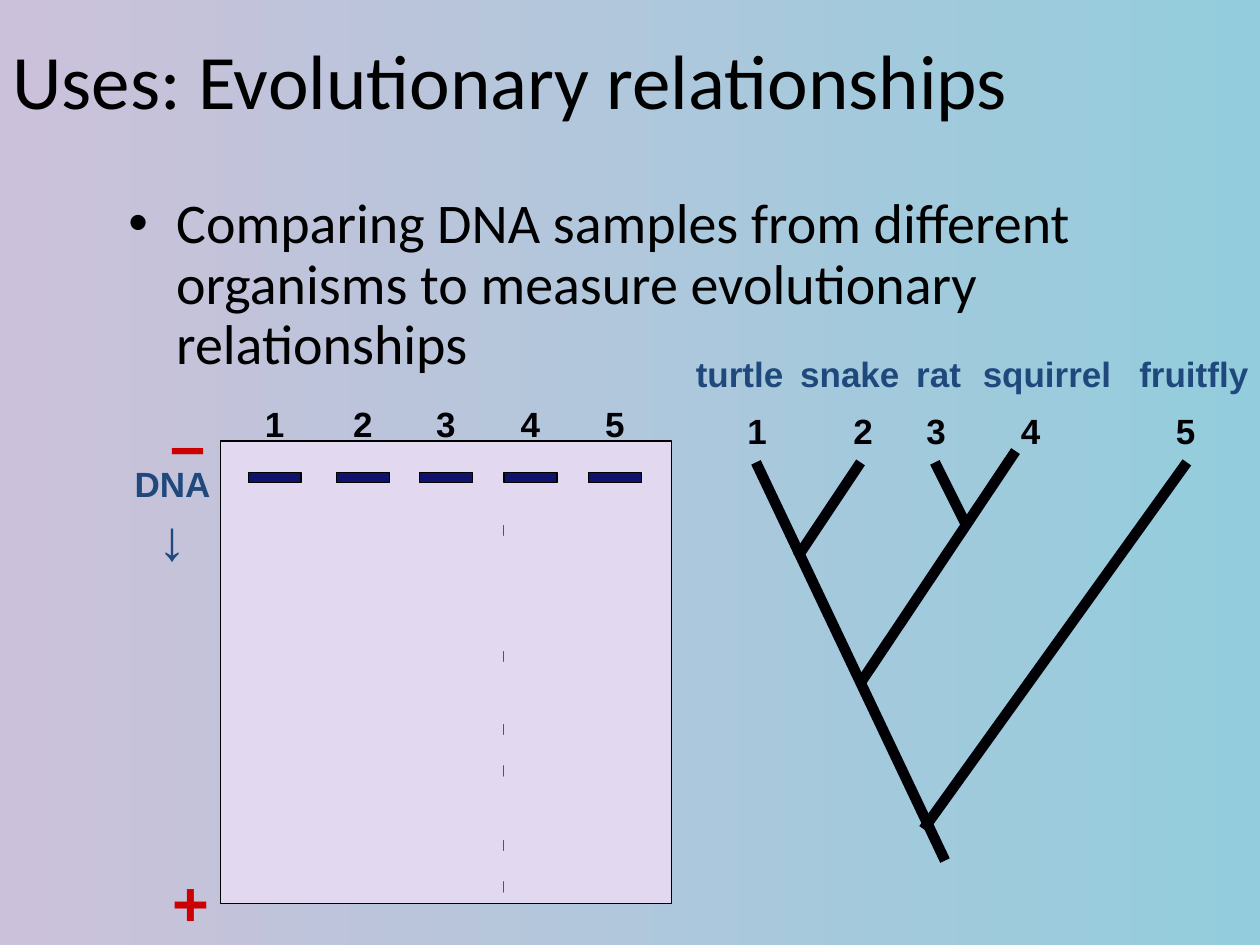
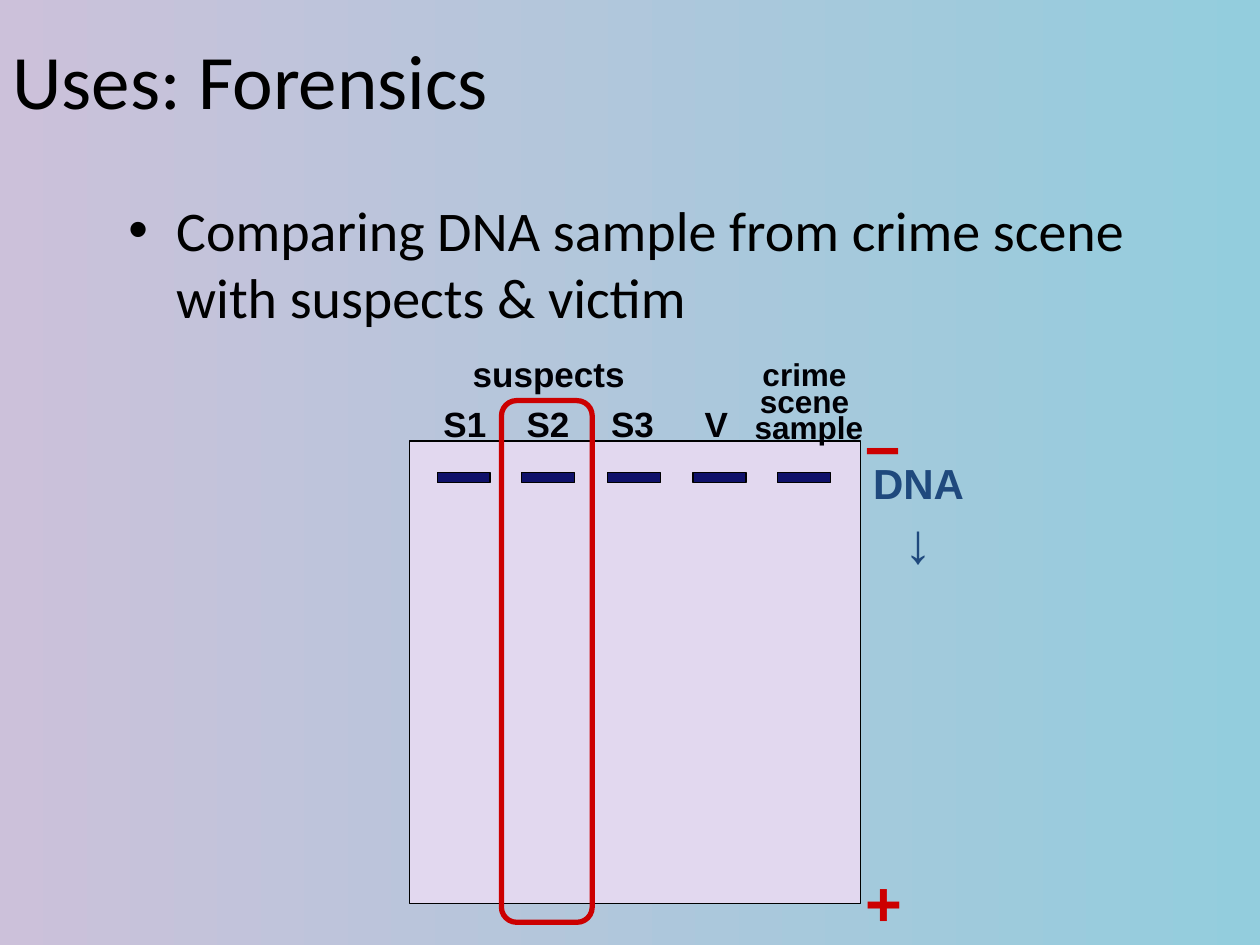
from lxml import etree
from pptx import Presentation
from pptx.dml.color import RGBColor
from pptx.enum.shapes import MSO_CONNECTOR, MSO_SHAPE
from pptx.enum.text import MSO_ANCHOR, PP_ALIGN
from pptx.oxml.ns import qn
from pptx.util import Inches, Pt

RECT, ROUND_RECT = MSO_SHAPE.RECTANGLE, MSO_SHAPE.ROUNDED_RECTANGLE
STRAIGHT = MSO_CONNECTOR.STRAIGHT
TOP, MIDDLE = MSO_ANCHOR.TOP, MSO_ANCHOR.MIDDLE
LEFT, CENTER = PP_ALIGN.LEFT, PP_ALIGN.CENTER

COLORS = {
    "bg_left": "CCC1DA", "bg_right": "93CDDD", "black": "000000",
    "ink": "000005", "red": "CC0000", "blue": "1F497D",
    "gel": "E2D8EF", "well": "0F116A",
}
BAND_W, BAND_H = 0.42, 0.08
LABEL_H = 0.43


def rgb(name):
    return RGBColor.from_string(COLORS[name])


def add_text(slide, text, x, y, w, h, size=20, color="ink", font="Arial", bold=True,
             align=CENTER, anchor=MIDDLE, wrap=False, spacing=None, bullet=False):
    tf = slide.shapes.add_textbox(Inches(x), Inches(y), Inches(w), Inches(h)).text_frame
    tf.word_wrap = wrap
    tf.vertical_anchor = anchor
    tf.text = text
    for p in tf.paragraphs:
        p.alignment = align
        if spacing:
            p.line_spacing = spacing
        if bullet:
            p.space_before = Pt(size * 0.2)
            pPr = p._p.get_or_add_pPr()
            pPr.set("marL", str(Inches(0.38)))
            pPr.set("indent", str(Inches(-0.38)))
            etree.SubElement(pPr, qn("a:buFont")).set("typeface", "Arial")
            etree.SubElement(pPr, qn("a:buChar")).set("char", "•")
        for r in p.runs:
            r.font.name, r.font.size, r.font.bold = font, Pt(size), bold
            r.font.color.rgb = rgb(color)
    return tf


def add_box(slide, x, y, w, h, fill=None, line=None, weight=0.75, preset=RECT):
    sp = slide.shapes.add_shape(preset, Inches(x), Inches(y), Inches(w), Inches(h))
    sp.shadow.inherit = False
    if fill:
        sp.fill.solid()
        sp.fill.fore_color.rgb = rgb(fill)
    else:
        sp.fill.background()
    if line:
        sp.line.color.rgb = rgb(line)
        sp.line.width = Pt(weight)
    else:
        sp.line.fill.background()


prs = Presentation()
prs.slide_width, prs.slide_height = Inches(10), Inches(7.5)

# Lanes hold the well's left edge, the label, and the label's left edge and width
PAGES = [
    {"title": "Uses: Evolutionary relationships",
     "body": "Comparing DNA samples from different organisms "
             "to measure evolutionary relationships",
     "spacing": 0.9, "gel": 1.75, "minus": 1.25, "plus": 1.27,
     "dna": (0.97, 3.62, 0.8, 0.97), "dna_size": 20,
     "lanes": [(1.97, "1", 2, 0.36), (2.67, "2", 2.7, 0.36), (3.33, "3", 3.36, 0.36),
               (4, "4", 4.03, 0.36), (4.67, "5", 4.7, 0.36)]},
    {"title": "Uses: Forensics",
     "body": "Comparing DNA sample from crime scene with suspects & victim",
     "spacing": None, "gel": 3.25, "minus": 6.77, "plus": 6.77,
     "dna": (6.83, 3.58, 0.92, 1.03), "dna_size": 24,
     "lanes": [(3.47, "S1", 3.42, 0.54), (4.14, "S2", 4.08, 0.54),
               (4.82, "S3", 4.75, 0.54), (5.5, "V", 5.49, 0.39), (6.17, "", 0, 0)]},
]

# Parts common to both slides
slides = []
for page in PAGES:
    s = prs.slides.add_slide(prs.slide_layouts[6])
    slides.append(s)
    bg = s.background.fill
    bg.gradient()
    bg.gradient_angle = 0
    for stop, name in zip(bg.gradient_stops, ("bg_left", "bg_right")):
        stop.color.rgb = rgb(name)

    add_text(s, page["title"], 0, 0, 9, 1.25, size=44, color="black", font="Calibri",
             bold=False, align=LEFT, wrap=True)
    add_text(s, page["body"], 0.92, 1.5, 8.75, 1.58, size=32, color="black",
             font="Calibri", bold=False, align=LEFT, anchor=TOP, wrap=True,
             spacing=page["spacing"], bullet=True)
    for sign, x, y in (("–", page["minus"], 3.17), ("+", page["plus"], 6.8)):
        add_text(s, sign, x, y, 0.48, 0.7, size=36, color="red", wrap=True)
    tf = add_text(s, "DNA\n↓", *page["dna"], size=page["dna_size"], color="blue")
    tf.paragraphs[1].runs[0].font.size = Pt(32)

    add_box(s, page["gel"], 3.5, 3.58, 3.67, fill="gel", line="black")
    for well_x, label, label_x, label_w in page["lanes"]:
        add_box(s, well_x, 3.75, BAND_W, BAND_H, fill="well", line="black")
        if label:
            add_text(s, label, label_x, 3.15, label_w, LABEL_H)

evolution, forensics = slides

# Lane 4 bands, covered except for their left edge
for y in (4.17, 5.17, 5.75, 6.08, 6.67, 7):
    add_box(evolution, 4, y, BAND_W, BAND_H, fill="blue", line="blue")
add_box(evolution, 4, 3.86, 0.56, 3.28, fill="gel")

# Evolutionary tree: branch start, branch end, number's left edge
BRANCHES = [
    (6, 3.67, 7.5, 6.83, 5.83),
    (6.83, 3.67, 6.33, 4.42, 6.67),
    (7.42, 3.67, 7.67, 4.17, 7.25),
    (8.06, 3.58, 6.83, 5.42, 8),
    (9.42, 3.67, 7.33, 6.58, 9.23),
]
for number, (x1, y1, x2, y2, label_x) in enumerate(BRANCHES, 1):
    branch = evolution.shapes.add_connector(
        STRAIGHT, Inches(x1), Inches(y1), Inches(x2), Inches(y2))
    branch.line.color.rgb = rgb("ink")
    branch.line.width = Pt(6)
    etree.SubElement(branch._element.spPr, qn("a:effectLst"))
    add_text(evolution, str(number), label_x, 3.2, 0.36, LABEL_H)

for animal, x, w in (("turtle", 5.42, 0.9), ("snake", 6.25, 0.99), ("rat", 7.17, 0.56),
                     ("squirrel", 7.7, 1.22), ("fruitfly", 8.94, 1.07)):
    add_text(evolution, animal, x, 2.75, w, LABEL_H, color="blue")

# Forensics: group labels and the highlighted suspect
add_text(forensics, "suspects", 3.65, 2.75, 1.41, LABEL_H)
add_text(forensics, "crime \vscene \vsample", 5.89, 2.85, 1.06, 0.73, size=18, spacing=0.7)
add_box(forensics, 3.98, 3.18, 0.72, 4.14, line="red", weight=3, preset=ROUND_RECT)

prs.save("out.pptx")
